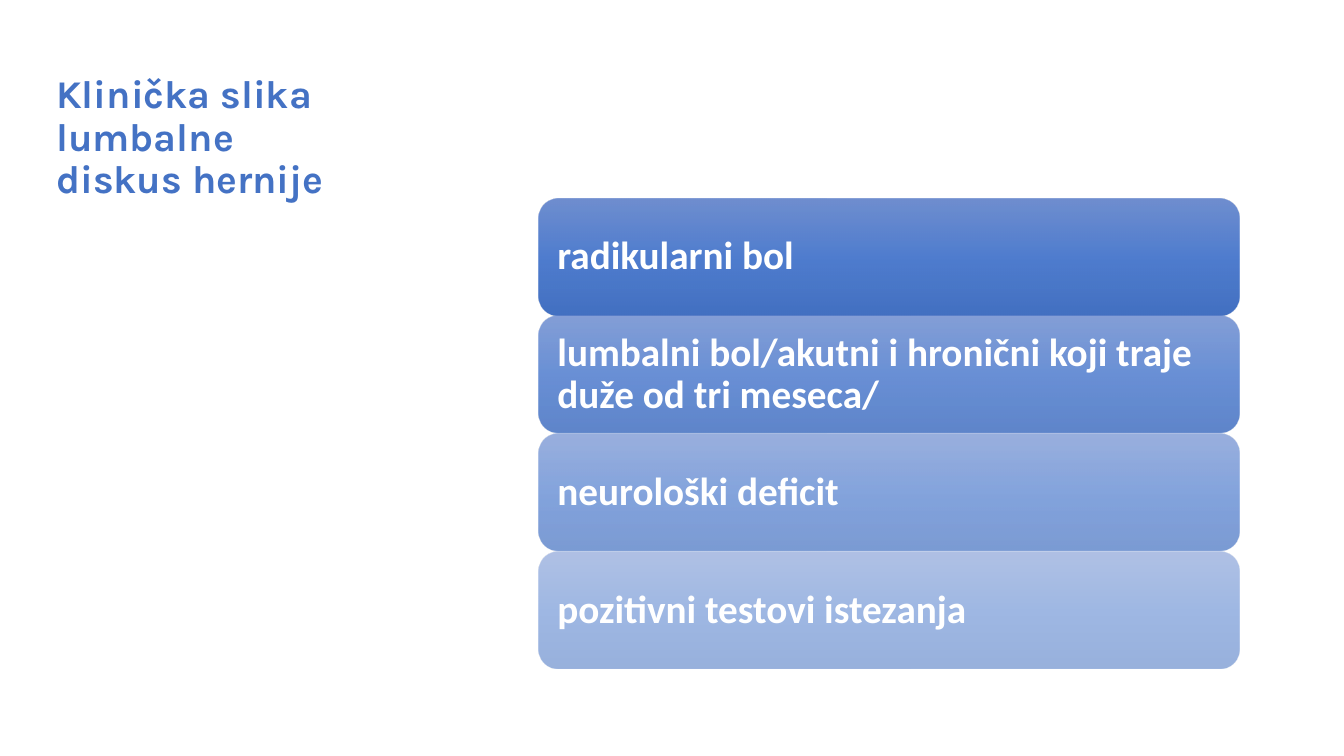
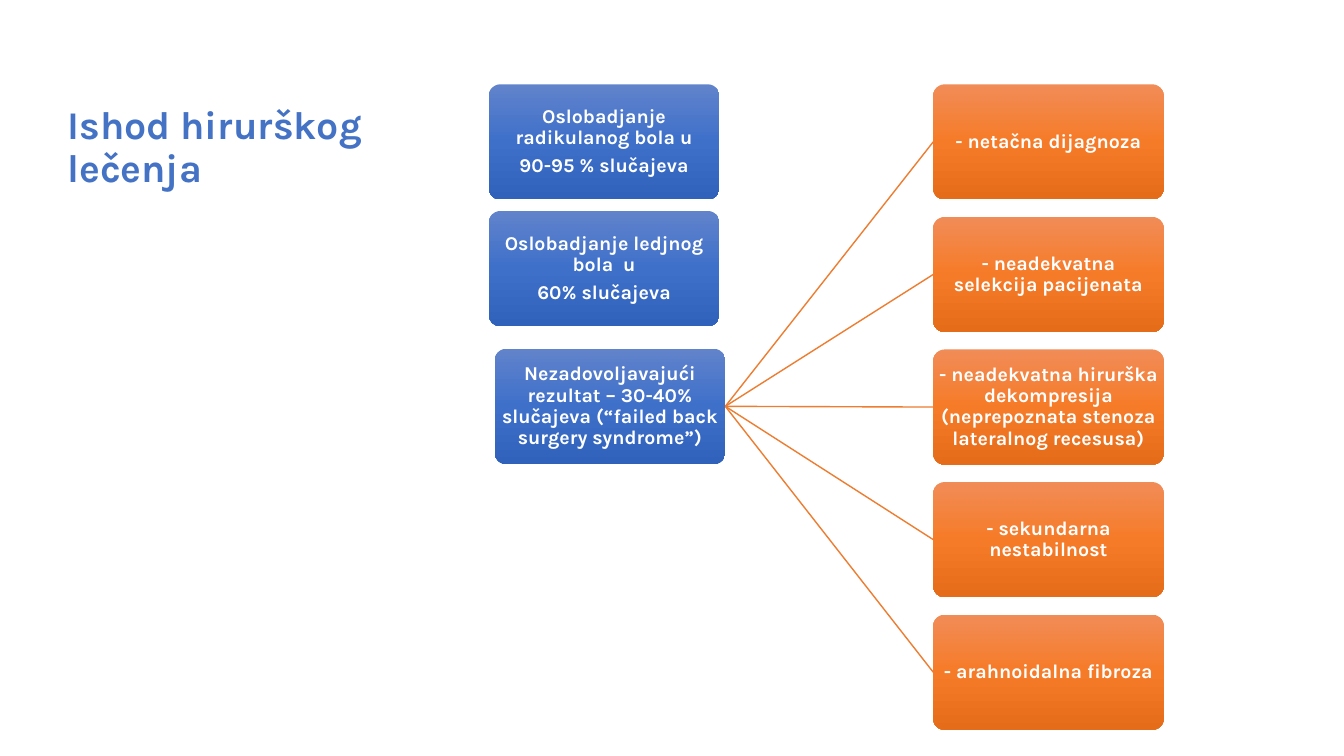
from lxml import etree
from pptx import Presentation
from pptx.dml.color import RGBColor
from pptx.enum.shapes import MSO_CONNECTOR, MSO_SHAPE
from pptx.enum.text import MSO_ANCHOR, PP_ALIGN
from pptx.oxml.ns import qn
from pptx.util import Pt

ROUNDED = MSO_SHAPE.ROUNDED_RECTANGLE
STRAIGHT = MSO_CONNECTOR.STRAIGHT
MIDDLE = MSO_ANCHOR.MIDDLE
LEFT, CENTER = PP_ALIGN.LEFT, PP_ALIGN.CENTER
TITLE_ONLY = 5
SIDE_LEFT, SIDE_RIGHT = 1, 3

BLUE, ORANGE, WHITE = "4472C4", "ED7D31", "FFFFFF"
BLUE_SHADES = ("6183CB", "3E70CA", "3062BB")
ORANGE_SHADES = ("F18C57", "F67B28", "E56C19")


def rgb(value):
    return RGBColor.from_string(value)


class Deck:
    def __init__(self):
        self.prs = Presentation()
        self.prs.slide_width, self.prs.slide_height = Pt(960), Pt(540)
        self.s = None

    def slide(self, title, left, top, width, height):
        self.s = self.prs.slides.add_slide(self.prs.slide_layouts[TITLE_ONLY])
        sp = self.s.shapes.title
        sp.left, sp.top, sp.width, sp.height = Pt(left), Pt(top), Pt(width), Pt(height)
        self.set_text(sp.text_frame, title, "Karla", 28, BLUE, LEFT)

    def set_text(self, tf, text, font, size, color, align):
        tf.text = text
        tf.word_wrap = True
        tf.vertical_anchor = MIDDLE
        for i, p in enumerate(tf.paragraphs):
            p.alignment = align
            p.line_spacing = 0.9
            if i:
                p.space_before = Pt(0.35 * size)
            for r in p.runs:
                r.font.name, r.font.size, r.font.bold = font, Pt(size), True
                r.font.color.rgb = rgb(color)

    def shade(self, sp, colors, opacity):
        """Fill from top to bottom with evenly spaced colours; opacity in percent."""
        sp.fill.gradient()
        sp.fill.gradient_angle = 270
        stops = sp._element.spPr.find(".//" + qn("a:gsLst"))
        for stop in list(stops):
            stops.remove(stop)
        for i, color in enumerate(colors):
            pos = 100000 * i // (len(colors) - 1)
            stop = etree.SubElement(stops, qn("a:gs"), pos=str(pos))
            clr = etree.SubElement(stop, qn("a:srgbClr"), val=color)
            if opacity < 100:
                etree.SubElement(clr, qn("a:alpha"), val=str(round(opacity * 1000)))

    def box(self, text, left, top, width, height, colors, opacity=100, corner=0.1,
            inset=0.5, font="Karla", size=14, align=CENTER):
        sp = self.s.shapes.add_shape(ROUNDED, Pt(left), Pt(top), Pt(width), Pt(height))
        sp.adjustments[0] = corner
        sp.shadow.inherit = False
        sp.line.fill.background()
        self.shade(sp, colors, opacity)
        tf = sp.text_frame
        tf.margin_left = tf.margin_right = tf.margin_top = tf.margin_bottom = Pt(inset)
        self.set_text(tf, text, font, size, WHITE, align)
        return sp

    def link(self, start, end):
        line = self.s.shapes.add_connector(STRAIGHT, 0, 0, 0, 0)
        line.begin_connect(start, SIDE_RIGHT)
        line.end_connect(end, SIDE_LEFT)
        line.line.color.rgb = rgb(ORANGE)
        line.line.width = Pt(1)
        etree.SubElement(line._element.spPr, qn("a:effectLst"))


def symptoms_slide(deck):
    deck.slide("Klinička slika lumbalne \vdiskus hernije", 33, 0, 245, 198)
    symptoms = (
        "radikularni bol",
        "lumbalni bol/akutni i hronični koji traje duže od tri meseca/",
        "neurološki deficit",
        "pozitivni testovi istezanja",
    )
    for i, text in enumerate(symptoms):
        deck.box(text, 385, 141.6 + 84.2 * i, 500, 83.5, BLUE_SHADES,
                 opacity=90 - 40 * i / 3, corner=0.17, inset=9,
                 font="Calibri", size=28, align=LEFT)


def outcome_slide(deck):
    deck.slide("Ishod hirurškog lečenja", 41, 10, 225, 192)
    width, height, top = 164.7, 82.3, 60.2
    outcomes = (
        ("Oslobadjanje radikulanog bola u\n90-95 % slučajeva", 349.2, top),
        ("Oslobadjanje ledjnog bola  u\n60% slučajeva", 349.2, 150.7),
        ("Nezadovoljavajući rezultat – 30-40% slučajeva "
         "(“failed back surgery syndrome”)", 353.4, 249.1),
    )
    causes = (
        "- netačna dijagnoza",
        "- neadekvatna selekcija pacijenata",
        "- neadekvatna hirurška dekompresija (neprepoznata stenoza lateralnog recesusa)",
        "- sekundarna nestabilnost",
        "- arahnoidalna fibroza",
    )
    for text, left, y in outcomes:
        poor_result = deck.box(text, left, y, width, height, BLUE_SHADES)
    for i, text in enumerate(causes):
        cause = deck.box(text, 666.6, top + 94.7 * i, width, height, ORANGE_SHADES)
        deck.link(poor_result, cause)


def main():
    deck = Deck()
    symptoms_slide(deck)
    outcome_slide(deck)
    deck.prs.save("out.pptx")


if __name__ == "__main__":
    main()
